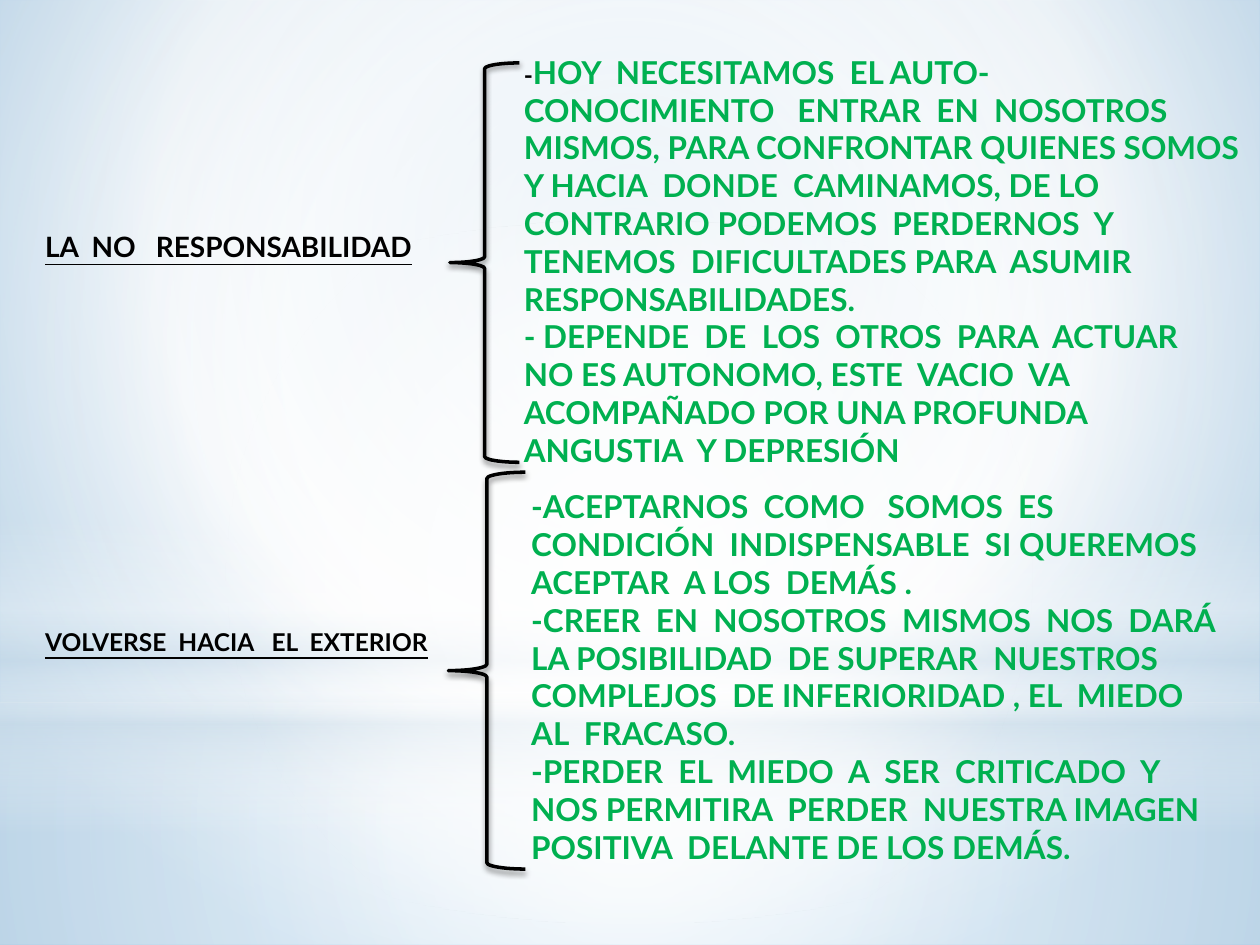
from lxml.etree import SubElement
from pptx import Presentation
from pptx.dml.color import RGBColor
from pptx.enum.shapes import MSO_SHAPE as Shape
from pptx.enum.text import MSO_AUTO_SIZE as AutoSize
from pptx.oxml.ns import qn
from pptx.util import Cm, Pt

FONT = "Lato"
COLORS = {
    "ink": "000000",
    "answer": "00B050",
    "white": "FFFFFF",
    "mist": "CCDDEA",
    "sky": "BCD5E8",
    "blue": "82B6DE",
}
CENTER = (50, 50, 50, 50)

# Shape, box in cm, stops (position, colour, opacity), focus (None: top to bottom)
GLOWS = [
    (Shape.RECTANGLE, (0, 14.17, 25.4, 4.88),
     [(0, "white", 91), (37, "white", 76), (100, "mist", 79)], CENTER),
    (Shape.RECTANGLE, (0, 0, 25.4, 14.17),
     [(0, "white", 89), (48, "white", 62), (100, "mist", 79)], CENTER),
    (Shape.RECTANGLE, (0, 10.46, 25.4, 6.35),
     [(0, "white", 0), (29, "white", 30), (45, "mist", 40),
      (55, "white", 26), (65, "mist", 60), (100, "white", 0)], None),
    (Shape.OVAL, (0, 4.45, 25.4, 14.17),
     [(0, "white", 100), (56, "white", 0)], CENTER),
]

# Each idea: heading, brace and the paragraphs it opens; a run is (text, size, colour)
IDEAS = [
    {
        "heading": ((0.66, 4.5, 8.41, 0.94), "LA  NO   RESPONSABILIDAD", 16),
        "brace": (9.07, 1.27, 1.4, 8.05),
        "answer_box": (10.31, 0.94, 14.94, 8.71),
        "answers": [
            [("-", 14, "ink"),
             ("HOY  NECESITAMOS  EL AUTO-CONOCIMIENTO   ENTRAR  EN  NOSOTROS  "
              "MISMOS, PARA CONFRONTAR QUIENES SOMOS Y HACIA  DONDE  CAMINAMOS, "
              "DE LO CONTRARIO PODEMOS  PERDERNOS  Y TENEMOS  DIFICULTADES PARA  "
              "ASUMIR  RESPONSABILIDADES.", 18, "answer")],
            [("- DEPENDE  DE  LOS  OTROS  PARA  ACTUAR  NO ES AUTONOMO, ESTE  "
              "VACIO  VA ACOMPAÑADO POR UNA PROFUNDA  ANGUSTIA  Y DEPRESIÓN",
              18, "answer")],
        ],
    },
    {
        "heading": ((0.66, 12.52, 8.66, 0.86), "VOLVERSE  HACIA   EL  EXTERIOR", 14),
        "brace": (9.04, 9.52, 1.55, 8.0),
        "answer_box": (10.46, 9.7, 14.66, 7.95),
        "answers": [
            [("-ACEPTARNOS  COMO   SOMOS  ES  CONDICIÓN  INDISPENSABLE  SI "
              "QUEREMOS  ACEPTAR  A LOS  DEMÁS .", 18, "answer")],
            [("-CREER  EN  NOSOTROS  MISMOS  NOS  DARÁ  LA POSIBILIDAD  DE "
              "SUPERAR  NUESTROS  COMPLEJOS  DE INFERIORIDAD , EL  MIEDO  AL  "
              "FRACASO.", 18, "answer")],
            [("-PERDER  EL  MIEDO  A  SER  CRITICADO  Y NOS PERMITIRA  PERDER  "
              "NUESTRA IMAGEN  POSITIVA  DELANTE DE LOS DEMÁS.", 18, "answer")],
        ],
    },
]


def place(box):
    return [Cm(length) for length in box]


def add_color(parent, color, opacity):
    tint = SubElement(parent, qn("a:srgbClr"), val=COLORS[color])
    if opacity < 100:
        SubElement(tint, qn("a:alpha"), val=str(opacity * 1000))


def set_gradient(fill, owner, stops, focus):
    """Replace the fill inside owner by a radial or, without focus, vertical gradient."""
    fill.solid()
    solid = owner.find(qn("a:solidFill"))
    gradient = owner.makeelement(qn("a:gradFill"), {"rotWithShape": "1"})
    owner.replace(solid, gradient)
    stop_list = SubElement(gradient, qn("a:gsLst"))
    for position, color, opacity in stops:
        stop = SubElement(stop_list, qn("a:gs"), pos=str(position * 1000))
        add_color(stop, color, opacity)
    if focus is None:
        SubElement(gradient, qn("a:lin"), ang=str(90 * 60000), scaled="0")
        return
    radial = SubElement(gradient, qn("a:path"), {"path": "circle"})
    edges = {side: str(value * 1000) for side, value in zip("ltrb", focus)}
    SubElement(radial, qn("a:fillToRect"), edges)


def paint_background(slide):
    fill = slide.background.fill
    fill.solid()
    stops = [(0, "sky", 100), (60, "white", 100), (100, "blue", 100)]
    owner = slide.element.find(".//" + qn("p:bgPr"))
    set_gradient(fill, owner, stops, (20, 10, 20, 60))


def add_glow(slide, kind, box, stops, focus):
    glow = slide.shapes.add_shape(kind, *place(box))
    glow.shadow.inherit = False
    glow.line.fill.background()
    set_gradient(glow.fill, glow.element.spPr, stops, focus)


def add_brace(slide, box):
    brace = slide.shapes.add_shape(Shape.LEFT_BRACE, *place(box))
    brace.fill.background()
    brace.line.color.rgb = RGBColor.from_string(COLORS["ink"])
    brace.line.width = Pt(2)
    brace.shadow.inherit = False
    effects = brace.element.spPr.find(qn("a:effectLst"))
    shadow = SubElement(effects, qn("a:outerShdw"), blurRad=str(Pt(3.1)),
                        dist=str(Pt(1.8)), dir=str(90 * 60000), rotWithShape="0")
    add_color(shadow, "ink", 45)


def add_text(slide, box, paragraphs, underline=False):
    frame = slide.shapes.add_textbox(*place(box)).text_frame
    frame.word_wrap = True
    frame.auto_size = AutoSize.SHAPE_TO_FIT_TEXT
    for index, runs in enumerate(paragraphs):
        paragraph = frame.add_paragraph() if index else frame.paragraphs[0]
        for words, size, color in runs:
            run = paragraph.add_run()
            run.text = words
            run.font.name = FONT
            run.font.size = Pt(size)
            run.font.bold = True
            run.font.color.rgb = RGBColor.from_string(COLORS[color])
            if underline:
                run.font.underline = True


def main():
    deck = Presentation()
    deck.slide_width, deck.slide_height = Cm(25.4), Cm(19.05)
    slide = deck.slides.add_slide(deck.slide_layouts[6])
    paint_background(slide)
    for glow in GLOWS:
        add_glow(slide, *glow)
    for idea in IDEAS:
        box, title, size = idea["heading"]
        add_text(slide, box, [[(title, size, "ink")]], underline=True)
        add_brace(slide, idea["brace"])
        add_text(slide, idea["answer_box"], idea["answers"])
    deck.save("out.pptx")


if __name__ == "__main__":
    main()
